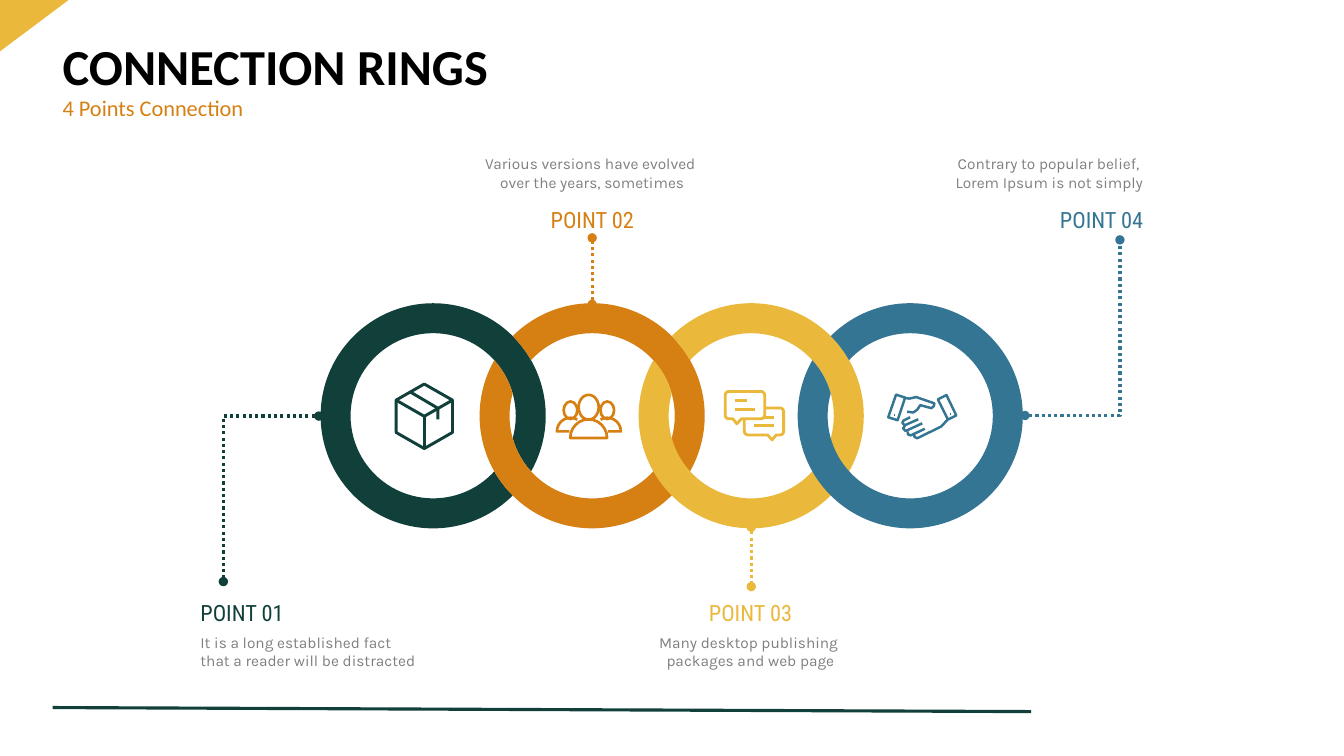
from dataclasses import dataclass
from math import acos, cos, degrees, radians, sin

from lxml import etree
from pptx import Presentation
from pptx.dml.color import RGBColor
from pptx.enum.dml import MSO_LINE
from pptx.enum.shapes import MSO_CONNECTOR, MSO_SHAPE
from pptx.enum.text import MSO_ANCHOR, PP_ALIGN
from pptx.oxml.ns import qn
from pptx.util import Pt

STRAIGHT, ELBOW = MSO_CONNECTOR.STRAIGHT, MSO_CONNECTOR.ELBOW
LEFT, CENTER, RIGHT = PP_ALIGN.LEFT, PP_ALIGN.CENTER, PP_ALIGN.RIGHT
TOP, MIDDLE, BOTTOM = MSO_ANCHOR.TOP, MSO_ANCHOR.MIDDLE, MSO_ANCHOR.BOTTOM


@dataclass(frozen=True)
class Theme:
    teal: str = "11403A"
    orange: str = "D68013"
    yellow: str = "EAB83B"
    blue: str = "347593"
    black: str = "000000"
    gray: str = "7F7F7F"
    title_font: str = "Calibri"
    label_font: str = "Roboto Condensed"
    body_font: str = "Karla"
    title_size: int = 36
    label_size: int = 16
    body_size: int = 11
    line: float = 2.25


T = Theme()


def arc(cx, cy, rx, ry, start=0, end=360):
    """Vertices of an arc split at quarter turns: (x, y), then (x, y, rx, ry, start, sweep)."""
    quarters = [a for a in range(-720, 1081, 90) if min(start, end) < a < max(start, end)]
    angles = [start, *sorted(quarters, reverse=end < start), end]
    ends = [(cx + rx * cos(radians(a)), cy + ry * sin(radians(a))) for a in angles]
    return ends[:1] + [(*xy, rx, ry, a, b - a)
                       for xy, a, b in zip(ends[1:], angles, angles[1:])]


TITLE, SUBTITLE = "CONNECTION RINGS", "4 Points Connection"

# Ring geometry
FIRST_X, RING_Y, PITCH = 309.4, 297, 113.6
OUTER, INNER = 80.4, 59

# Icons: stroke width, top-left corner, strokes in hundredths of an inch
ICON_UNIT = 0.72
BOX = (2.1, (281.5, 272.9), [
    [(30, 2), (58, 18), (58, 50), (30, 66), (2, 50), (2, 18), (30, 2)],
    [(2, 18), (30, 34), (58, 18)],
    [(30, 34), (30, 66)],
    [(15.5, 9.5), (43.5, 26), (43.5, 37)],
])
PEOPLE = (1.9, (396.7, 280.8), [
    arc(33, 14, 10, 12.3),
    arc(15, 17, 6.8, 8.7),
    arc(51.5, 17, 6.8, 8.7),
    arc(33, 44.5, 18.3, 18.5, 180, 360) + [(14.7, 44.5)],
    [(14, 38)] + arc(15, 38, 13.5, 13.5, 180, 300),
    [(52, 38)] + arc(51.5, 38, 13.5, 13.5, 0, -120),
])
CHAT = (2, (517, 278.6), [
    arc(5, 5, 3.6, 3.6, 180, 270) + arc(37, 5, 3.6, 3.6, 270, 360)
    + arc(37, 25, 3.6, 3.6, 0, 90) + [(17.5, 28.6), (13, 33.5), (9, 28.6)]
    + arc(5, 25, 3.6, 3.6, 90, 180) + [(1.4, 5)],
    [(41, 17.8)] + arc(55.8, 21.4, 3.6, 3.6, 270, 360)
    + arc(55.8, 41, 3.6, 3.6, 0, 90) + [(52, 44.6), (48, 49.5), (43.5, 44.6)]
    + arc(24, 41, 3.6, 3.6, 90, 180) + [(20.4, 29)],
    [(11, 10.5), (23, 10.5)],
    [(11, 19), (31, 19)],
    [(40, 27.5), (50, 27.5)],
    [(30, 35.5), (50, 35.5)],
])
HANDSHAKE = (1.75, (633.6, 280.8), [
    [(9, 1.5), (18, 4.5), (10.5, 27), (1.2, 24), (9, 1.5)],
    [(7, 21.5), (8, 21.5)],
    [(59, 2), (50.5, 6.2), (60.5, 26.3), (68.7, 22.2), (59, 2)],
    [(62.5, 20.8), (63.5, 20.8)],
    [(18, 4.8), (22, 5.5), (29, 4), (47, 10.2), (46.5, 13), (44, 15),
     (33, 12), (30, 16.5), (26, 19.3), (20, 18.5)],
    [(23, 24), (16.5, 27.2), (15.2, 29.5), (17.5, 32), (31, 26)],
    [(18, 32), (16, 35), (18.5, 37.6), (35, 30)],
    [(20.5, 38), (20.8, 41), (23.5, 42), (37.5, 35.5)],
    [(27, 40.5), (27.2, 43.5), (30, 44.8), (47, 36.5), (54, 33), (60, 26.5)],
])

# Body boxes and label boxes sit above or below the rings: (top, height)
ABOVE = {"body": (106.6, 33.8), "label": (143.3, 26.6), "inset": 3.6, "anchor": BOTTOM}
BELOW = {"body": (448.6, 33.8), "label": (419, 31.7), "inset": 8.64, "anchor": TOP}
TEXT_WIDTH = 182.2

# label, body lines, colour, icon, text left, alignment, side, link start, link end
POINTS = [
    ("POINT 01", ("It is a long established fact ", "that a reader will be distracted"),
     T.teal, BOX, 136.1, LEFT, BELOW, (227.8, 297.2), (159.6, 415.4)),
    ("POINT 02", ("Various versions have evolved ", "over the years, sometimes"),
     T.orange, PEOPLE, 332, CENTER, ABOVE, (423, 217.4), (423, 169.9)),
    ("POINT 03", ("Many desktop publishing ", "packages and web page"),
     T.yellow, CHAT, 445, CENTER, BELOW, (536.6, 376.6), (536.6, 419)),
    ("POINT 04", ("Contrary to popular belief, ", "Lorem Ipsum is not simply"),
     T.blue, HANDSHAKE, 641.5, RIGHT, ABOVE, (732.2, 296.8), (800, 171.4)),
]


def rgb(color):
    return RGBColor.from_string(color)


def write(s, lines, font, size, color, align=LEFT, anchor=MIDDLE, inset=3.6, bold=False):
    tf = s.text_frame
    tf.word_wrap, tf.vertical_anchor, tf.margin_top = True, anchor, Pt(inset)
    p = tf.paragraphs[0]
    p.alignment = align
    for i, line in enumerate(lines):
        if i:
            p.add_line_break()
        r = p.add_run()
        r.text = line
        r.font.name, r.font.size, r.font.bold = font, Pt(size), bold
        r.font.color.rgb = rgb(color)
    return p


def add_text(shapes, box, *args, **kwargs):
    return write(shapes.add_textbox(*map(Pt, box)), *args, **kwargs)


def add_outline(shapes, strokes, origin, unit=1, close=False):
    """One freeform holding every stroke, with true arcs where a vertex asks for one."""
    emu = [[(Pt(v[0] * unit), Pt(v[1] * unit)) for v in stroke] for stroke in strokes]
    builder = shapes.build_freeform(*emu[0][0])
    for i, stroke in enumerate(emu):
        if i:
            builder.move_to(*stroke[0])
        builder.add_line_segments(stroke[1:], close=close)
    s = builder.convert_to_shape(*map(Pt, origin))
    s.shadow.inherit = False
    outline = next(s._element.iter(qn("a:path")))
    steps = [step for step in outline if step.tag != qn("a:close")]
    for step, vertex in zip(steps, [v for stroke in strokes for v in stroke]):
        if len(vertex) > 2:
            rx, ry, start, sweep = vertex[2:]
            curve = etree.Element(qn("a:arcTo"), wR=str(Pt(rx * unit)), hR=str(Pt(ry * unit)),
                                  stAng=str(round(start % 360 * 60000)),
                                  swAng=str(round(sweep * 60000)))
            outline.replace(step, curve)
    return s


def fill_plain(s, color):
    s.shadow.inherit = False
    s.fill.solid()
    s.fill.fore_color.rgb = rgb(color)
    s.line.fill.background()


def crossing(own, other):
    """Angle on a circle where the neighbour's circle crosses it."""
    return degrees(acos((PITCH**2 + own**2 - other**2) / (2 * PITCH * own)))


def ring_points(turn):
    """Ring cut where its neighbour passes over: lower right, or upper left at half a turn."""
    def own(radius, start, end):
        return arc(0, 0, radius, radius, start + turn, end + turn)

    def neighbour(radius, first, last):
        return arc(PITCH * cos(radians(turn)), 0, radius, radius,
                   180 + turn - crossing(radius, first), 180 + turn - crossing(radius, last))

    return (own(OUTER, crossing(OUTER, OUTER), 360 + crossing(OUTER, INNER))
            + neighbour(INNER, OUTER, INNER)
            + own(INNER, 360 + crossing(INNER, INNER), crossing(INNER, OUTER))
            + neighbour(OUTER, INNER, OUTER))


def add_line(shapes, start, end, color, kind=STRAIGHT):
    s = shapes.add_connector(kind, *map(Pt, (*start, *end)))
    s.line.color.rgb, s.line.width = rgb(color), Pt(T.line)
    etree.SubElement(s._element.spPr, qn("a:effectLst"))
    return s


def add_link(shapes, start, end, color):
    """Dotted link with round ends, turning once if its ends are not in line."""
    bent = start[0] != end[0]
    s = add_line(shapes, start, end, color, ELBOW if bent else STRAIGHT)
    s.line.dash_style = MSO_LINE.ROUND_DOT
    if bent:
        s._element.spPr.find(qn("a:prstGeom")).set("prst", "bentConnector2")
    ln = s._element.spPr.find(qn("a:ln"))
    for tag in ("a:headEnd", "a:tailEnd"):
        etree.SubElement(ln, qn(tag), type="oval")


def main():
    prs = Presentation()
    prs.slide_width, prs.slide_height = Pt(960), Pt(540)
    shapes = prs.slides.add_slide(prs.slide_layouts[5]).shapes

    add_line(shapes, (37.6, 505.4), (736.6, 508.3), T.teal)
    corner = shapes.add_shape(MSO_SHAPE.RIGHT_TRIANGLE, 0, 0, Pt(49), Pt(36.7))
    corner._element.spPr.xfrm.set("flipV", "1")
    fill_plain(corner, T.yellow)

    title = shapes.title
    title.left, title.top, title.width, title.height = map(Pt, (37.6, 28.1, 885, 43.2))
    write(title, [TITLE], T.title_font, T.title_size, T.black, bold=True).line_spacing = 0.9
    add_text(shapes, (37.6, 64.1, 885, 28.1), [SUBTITLE],
             T.title_font, T.label_size, T.orange).line_spacing = 0.9

    for i, (label, body, color, icon, left, align, side, start, end) in enumerate(POINTS):
        ring = add_outline(shapes, [ring_points(180 if i else 0)],
                           (FIRST_X + i * PITCH, RING_Y), close=True)
        fill_plain(ring, color)
        add_link(shapes, start, end, color)
        width, origin, strokes = icon
        s = add_outline(shapes, strokes, origin, ICON_UNIT)
        s.fill.background()
        s.line.color.rgb, s.line.width = rgb(color), Pt(width)
        for key, lines, font, size, tint, inset in (
                ("body", body, T.body_font, T.body_size, T.gray, 3.6),
                ("label", [label], T.label_font, T.label_size, color, side["inset"])):
            top, height = side[key]
            add_text(shapes, (left, top, TEXT_WIDTH, height), lines, font, size, tint,
                     align, side["anchor"], inset)
    prs.save("out.pptx")


if __name__ == "__main__":
    main()
